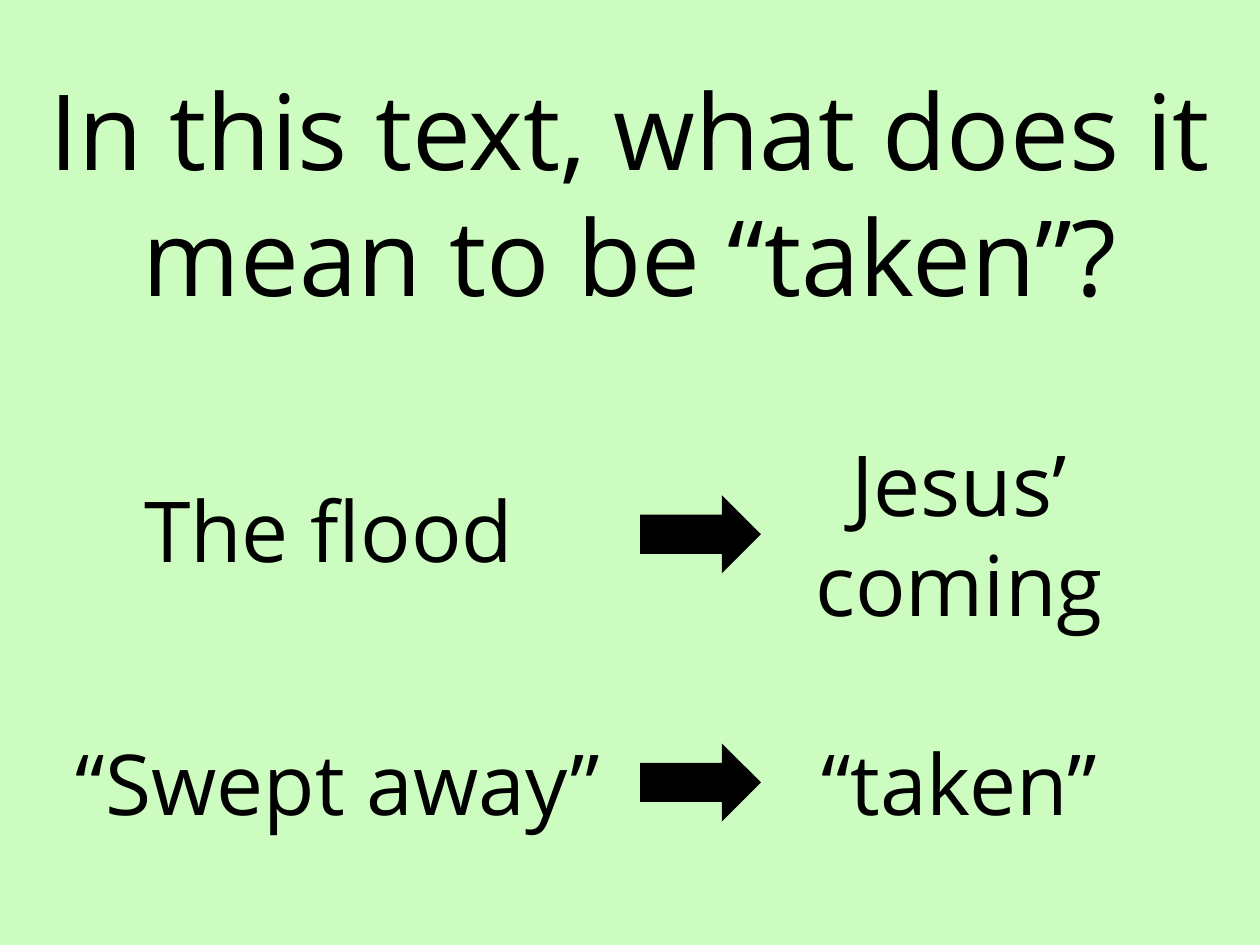
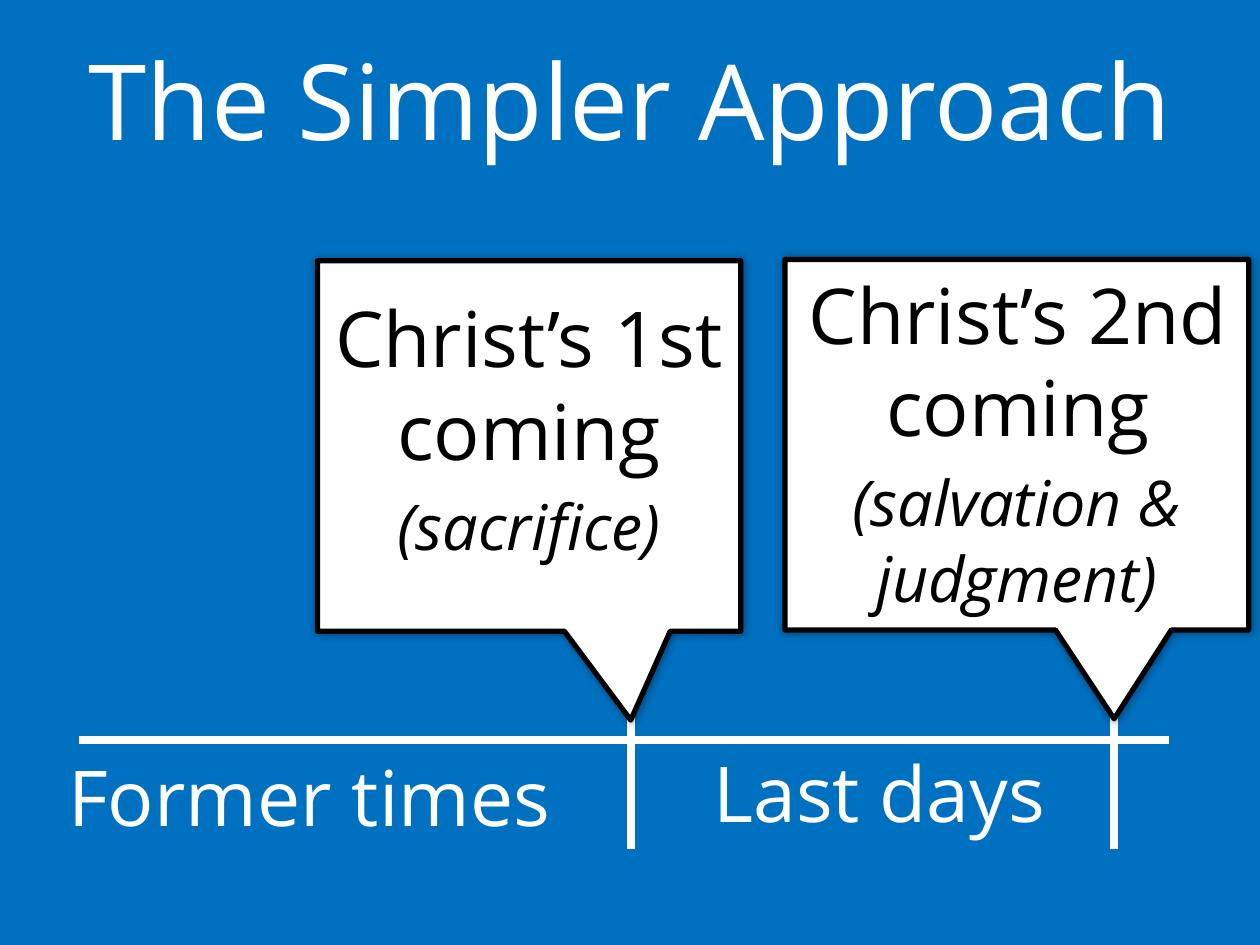
from lxml.etree import SubElement
from pptx import Presentation
from pptx.dml.color import RGBColor
from pptx.enum.shapes import MSO_CONNECTOR, MSO_SHAPE
from pptx.enum.text import MSO_ANCHOR, MSO_AUTO_SIZE, PP_ALIGN
from pptx.oxml.ns import qn
from pptx.util import Inches, Pt

BLACK = RGBColor(0x00, 0x00, 0x00)
WHITE = RGBColor(0xFF, 0xFF, 0xFF)
GREEN = RGBColor(0xCD, 0xFC, 0xC0)
BLUE = RGBColor(0x00, 0x70, 0xC0)
FONT = "Open Sans"
COLS, ROWS = 100, 75
TITLE_ONLY = 5


class Deck:
    """Holds the style and the current slide; lengths are in grid cells."""

    def __init__(self):
        self.file = Presentation()
        self.file.slide_width, self.file.slide_height = Inches(10), Inches(7.5)

    def grid(self, left, top, width, height):
        """Turn columns and rows into slide lengths."""
        col, row = self.file.slide_width / COLS, self.file.slide_height / ROWS
        return (round(left * col), round(top * row),
                round(width * col), round(height * row))

    def page(self, back, ink):
        self.slide = self.file.slides.add_slide(self.file.slide_layouts[TITLE_ONLY])
        self.ink = ink
        fill = self.slide.background.fill
        fill.solid()
        fill.fore_color.rgb = back

    def label(self, shape, text, size, ink=None, italic=False):
        frame = shape.text_frame
        frame.word_wrap = True
        frame.auto_size = MSO_AUTO_SIZE.NONE
        frame.vertical_anchor = MSO_ANCHOR.TOP
        frame.text = text
        line = frame.paragraphs[0]
        line.alignment = PP_ALIGN.CENTER
        font = line.font
        font.name, font.size, font.italic = FONT, Pt(size), italic
        font.color.rgb = self.ink if ink is None else ink

    def title(self, text, top, height):
        shape = self.slide.shapes.title
        shape.left, shape.top, shape.width, shape.height = self.grid(0, top, COLS, height)
        self.label(shape, text, 60)

    def text(self, text, box, size, ink=None, italic=False):
        shape = self.slide.shapes.add_textbox(*self.grid(*box))
        self.label(shape, text, size, ink, italic)

    def shape(self, kind, box, color):
        shape = self.slide.shapes.add_shape(kind, *self.grid(*box))
        shape.shadow.inherit = False
        shape.fill.solid()
        shape.fill.fore_color.rgb = color
        shape.line.fill.background()
        return shape

    def arrow(self, top):
        self.shape(MSO_SHAPE.RIGHT_ARROW, (50.8, top, 9.6, 6.2), BLACK)

    def line(self, left, top, right, bottom):
        ends = self.grid(left, top, right, bottom)
        line = self.slide.shapes.add_connector(MSO_CONNECTOR.STRAIGHT, *ends)
        line.line.color.rgb, line.line.width = self.ink, Pt(4.5)
        SubElement(line._element.spPr, qn("a:effectLst"))

    def callout(self, box, tip):
        """Draw a box whose pointer ends at tip, with a soft even shadow."""
        shape = self.shape(MSO_SHAPE.RECTANGULAR_CALLOUT, box, WHITE)
        shape.adjustments[0], shape.adjustments[1] = tip
        shape.line.color.rgb, shape.line.width = BLACK, Pt(3)
        effects = shape._element.spPr.find(qn("a:effectLst"))
        shadow = SubElement(effects, qn("a:outerShdw"), blurRad=str(int(Pt(5))),
                            dist="0", dir="0", rotWithShape="0")
        color = SubElement(shadow, qn("a:srgbClr"), val=str(BLACK))
        SubElement(color, qn("a:alpha"), val="40000")


def taken(deck):
    deck.page(GREEN, BLACK)
    deck.title("In this text, what does it mean to be “taken”?", 4.7, 21.2)
    for text, box in (("“Swept away”", (4.2, 57.6, 45.3, 9.1)),
                      ("“taken”", (54.8, 57.6, 42.6, 9.1)),
                      ("The flood", (4.8, 37.5, 42.6, 9.1)),
                      ("Jesus’ coming", (60.5, 33.8, 31.2, 17.2))):
        deck.text(text, box, 48)
    for top in (39.3, 59):
        deck.arrow(top)


def simpler(deck):
    deck.page(BLUE, WHITE)
    deck.title("The Simpler Approach", 2.3, 11.1)
    deck.text("Former times", (2.5, 59, 44.1, 8.4), 44)
    deck.text("Last days", (51.4, 58.7, 36.8, 8.4), 44)
    deck.line(6.3, 58.7, 92.8, 58.7)
    for left in (50.1, 88.4):
        deck.line(left, 67.4, left, 53.9)

    comings = (
        ((25.2, 20.7, 33.6, 29.4), (0.24, 0.74),
         "Christ’s 1st coming", (24.7, 22.6, 34.6, 15.8),
         "(sacrifice)", (24.7, 38.2, 34.6, 7.1)),
        ((62.3, 20.6, 36.8, 29.4), (0.21, 0.74),
         "Christ’s 2nd coming", (62.4, 20.7, 36.8, 15.8),
         "(salvation & judgment)", (63.4, 36.3, 34.6, 13.1)),
    )
    for box, tip, event, head, aim, foot in comings:
        deck.callout(box, tip)
        deck.text(event, head, 44, BLACK)
        deck.text(aim, foot, 36, BLACK, italic=True)


def main():
    deck = Deck()
    taken(deck)
    simpler(deck)
    deck.file.save("out.pptx")


if __name__ == "__main__":
    main()
